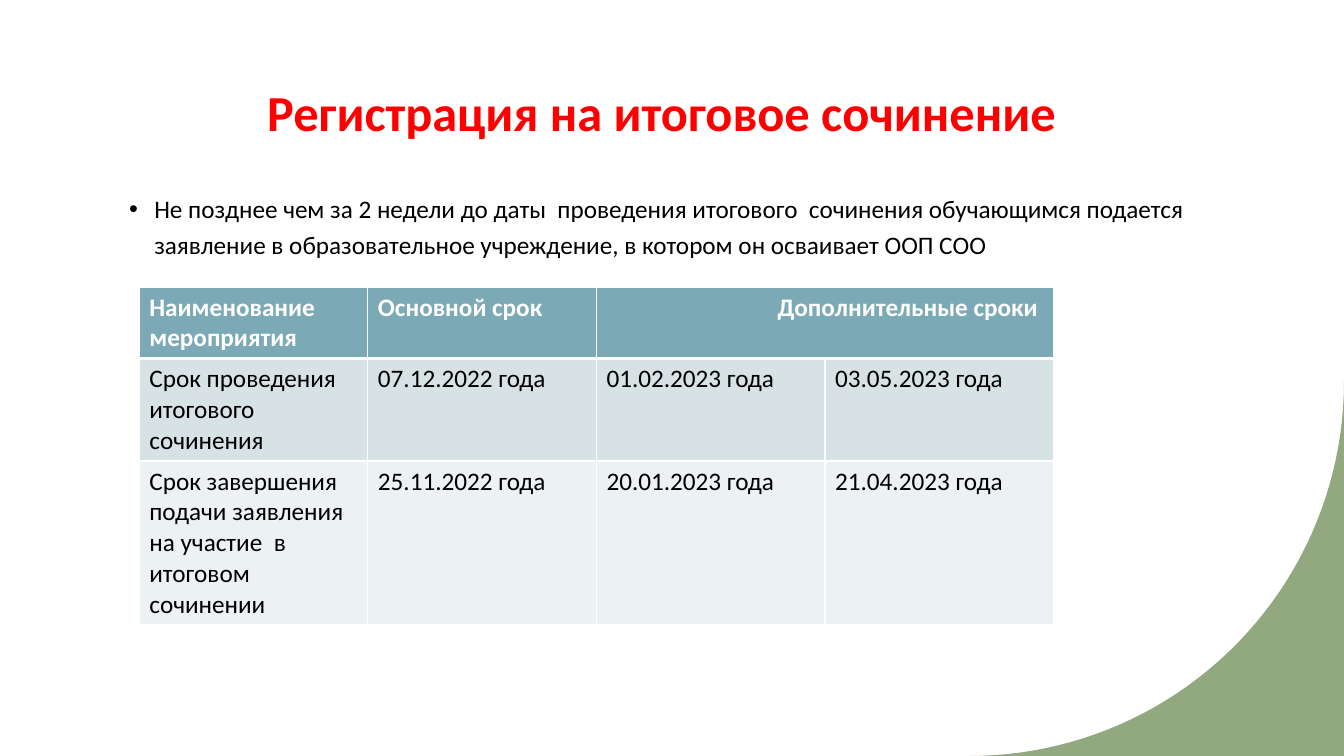
"""Build the slide on registration for the final essay."""
from math import cos, radians, sin

from lxml import etree
from pptx import Presentation
from pptx.dml.color import RGBColor
from pptx.enum.text import MSO_ANCHOR, MSO_AUTO_SIZE, PP_ALIGN
from pptx.oxml.ns import qn
from pptx.util import Pt

LEFT, CENTER, RIGHT = PP_ALIGN.LEFT, PP_ALIGN.CENTER, PP_ALIGN.RIGHT
TOP, BOTTOM = MSO_ANCHOR.TOP, MSO_ANCHOR.BOTTOM
NO_FIT = MSO_AUTO_SIZE.NONE

RED = RGBColor(0xFF, 0x00, 0x00)
BLACK = RGBColor(0x00, 0x00, 0x00)
WHITE = RGBColor(0xFF, 0xFF, 0xFF)
GREEN = RGBColor(0x92, 0xA8, 0x7F)
TEAL = RGBColor(0x7B, 0xA9, 0xB5)
MIST = RGBColor(0xD7, 0xE2, 0xE5)
PALE = RGBColor(0xEC, 0xF1, 0xF3)

FONT = "Calibri"
WIDE, HIGH = 960, 540
RADIUS = 267.5

TITLE = "Регистрация на итоговое сочинение "
RULE = ("Не позднее чем за 2 недели до даты  проведения итогового  сочинения "
        "обучающимся подается заявление в образовательное учреждение, "
        "в котором он осваивает ООП СОО")
ROWS = [
    ["Наименование мероприятия", "Основной срок", "Дополнительные сроки "],
    ["Срок проведения итогового сочинения",
     "07.12.2022 года", "01.02.2023 года", "03.05.2023 года"],
    ["Срок завершения подачи заявления на участие  в итоговом сочинении",
     "25.11.2022 года", "20.01.2023 года", "21.04.2023 года"],
]
FILLS = [TEAL, MIST, PALE]
HEIGHTS = [51, 73, 117]
COL = 163.3


def write(frame, text, size=18, color=BLACK, bold=False, align=LEFT,
          line=1.0, before=0):
    """Put one formatted paragraph into a text frame and return it."""
    para = frame.paragraphs[0]
    para.alignment = align
    para.line_spacing = line
    para.space_before = Pt(before)
    run = para.add_run()
    run.text = text
    font = run.font
    font.name, font.size, font.bold = FONT, Pt(size), bold
    font.color.rgb = color
    return para


def place(holder, left, top, width, height, anchor):
    """Move a placeholder and return its text frame."""
    holder.left, holder.top = Pt(left), Pt(top)
    holder.width, holder.height = Pt(width), Pt(height)
    frame = holder.text_frame
    frame.auto_size = NO_FIT
    frame.word_wrap = True
    frame.vertical_anchor = anchor
    return frame


def bullet(para, indent):
    """Give a paragraph a round bullet with a hanging indent."""
    props = para._p.get_or_add_pPr()
    props.set("marL", str(Pt(indent)))
    props.set("indent", str(Pt(-indent)))
    etree.SubElement(props, qn("a:buFont"), typeface="Arial")
    etree.SubElement(props, qn("a:buChar"), char="•")


def border(cell, widths):
    """Draw white cell borders in the order left, right, top, bottom."""
    props = cell._tc.get_or_add_tcPr()
    for spot, (side, width) in enumerate(zip("LRTB", widths)):
        edge = etree.Element(qn(f"a:ln{side}"), w=str(Pt(width)))
        fill = etree.SubElement(edge, qn("a:solidFill"))
        etree.SubElement(fill, qn("a:srgbClr"), val=str(WHITE))
        props.insert(spot, edge)


def corner(slide):
    """Fill the lower right corner outside a quarter circle."""
    arc = [(WIDE - RADIUS * (1 - cos(radians(step))),
            HIGH - RADIUS * (1 - sin(radians(step))))
           for step in range(0, 91, 2)]
    pen = slide.shapes.build_freeform(Pt(WIDE), Pt(HIGH))
    pen.add_line_segments([(Pt(x), Pt(y)) for x, y in arc])
    shape = pen.convert_to_shape()
    shape.shadow.inherit = False
    shape.fill.solid()
    shape.fill.fore_color.rgb = GREEN
    shape.line.fill.background()
    slide.shapes.title.element.addprevious(shape.element)


def dates(slide, left, top):
    """Add the table of dates with a merged header cell."""
    count = len(ROWS[1])
    table = slide.shapes.add_table(
        len(ROWS), count, Pt(left), Pt(top),
        Pt(COL * count), Pt(sum(HEIGHTS))).table
    for col in table.columns:
        col.width = Pt(COL)
    for i, texts in enumerate(ROWS):
        head = i == 0
        table.rows[i].height = Pt(HEIGHTS[i])
        for j in range(count):
            cell = table.cell(i, j)
            cell.fill.solid()
            cell.fill.fore_color.rgb = FILLS[i]
            border(cell, (1, 1, 3 if i == 1 else 1, 3 if head else 1))
        for j, text in enumerate(texts):
            write(table.cell(i, j).text_frame, text, bold=head,
                  color=WHITE if head else BLACK,
                  align=RIGHT if head and j == 2 else LEFT)
    table.cell(0, 2).merge(table.cell(0, 3))


def main():
    """Build and save the slide."""
    deck = Presentation()
    deck.slide_width, deck.slide_height = Pt(WIDE), Pt(HIGH)
    slide = deck.slides.add_slide(deck.slide_layouts[1])
    corner(slide)
    frame = place(slide.shapes.title, 85, 57, 783.4, 47.5, BOTTOM)
    write(frame, TITLE, size=36, color=RED, bold=True, align=CENTER, line=1.1)
    frame = place(slide.placeholders[1], 85, 130.3, 783.4, 391.7, TOP)
    bullet(write(frame, RULE, line=1.2, before=10), 18)
    dates(slide, 99.5, 205)
    deck.save("out.pptx")


if __name__ == "__main__":
    main()
